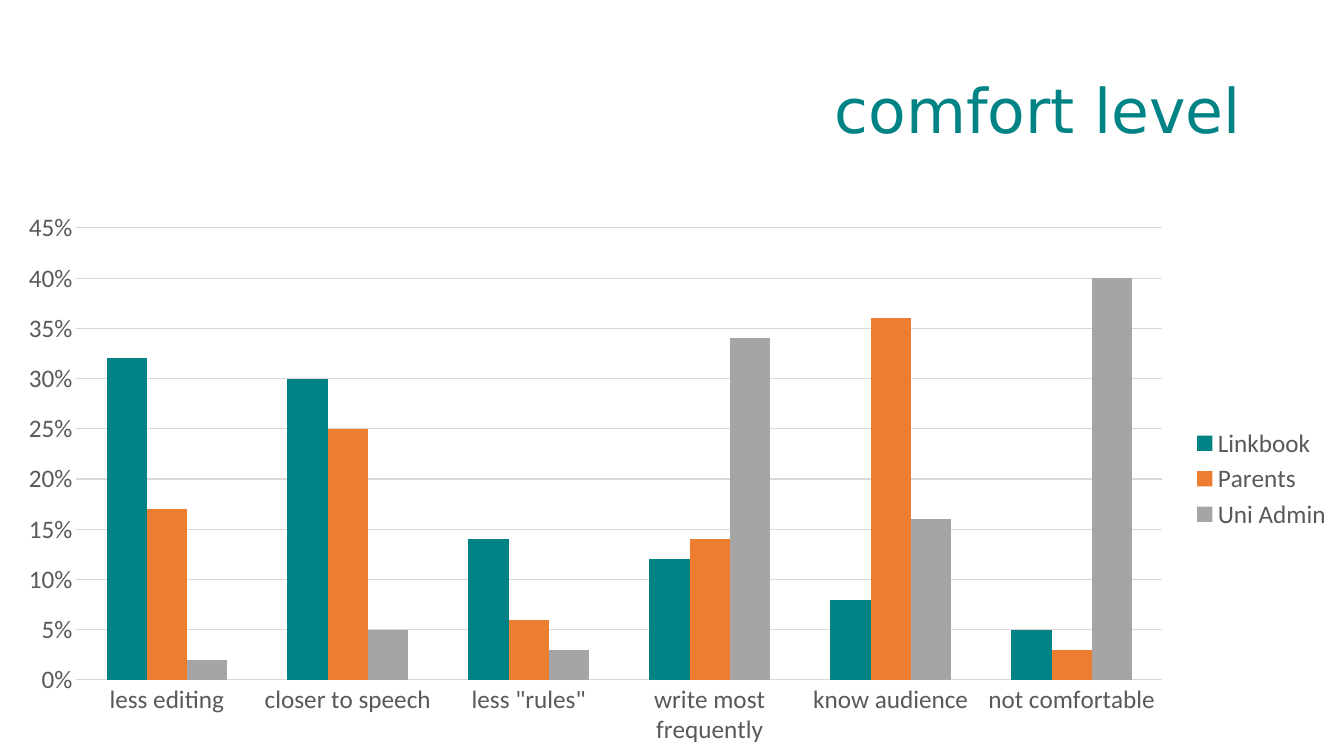
import pptx
import pptx.chart.data
import pptx.dml.color
import pptx.enum.chart
import pptx.enum.text
import pptx.util
from pptx.util import Cm

COLOURS = {
    "teal": "008385",
    "orange": "ED7D31",
    "silver": "A5A5A5",
    "label": "595959",
    "rule": "D9D9D9",
}
REASONS = ["less editing", "closer to speech", 'less "rules"',
           "write most frequently", "know audience", "not comfortable"]
AUDIENCES = [
    ("Linkbook", "teal", [0.32, 0.3, 0.14, 0.12, 0.08, 0.05]),
    ("Parents", "orange", [0.17, 0.25, 0.06, 0.14, 0.36, 0.03]),
    ("Uni Admin", "silver", [0.02, 0.05, 0.03, 0.34, 0.16, 0.4]),
]


def colour(name):
    return pptx.dml.color.RGBColor.from_string(COLOURS[name])


def style_font(font, size, name, colour_name):
    font.size = pptx.util.Pt(size)
    font.name = name
    font.color.rgb = colour(colour_name)


def style_line(line, colour_name, width):
    line.color.rgb = colour(colour_name)
    line.width = pptx.util.Pt(width)


def add_text(page, words, left, top, width, height, *, size, font, colour_name,
             align, anchor, line_spacing=1.0):
    box = page.shapes.add_textbox(Cm(left), Cm(top), Cm(width), Cm(height))
    frame = box.text_frame
    frame.word_wrap = True
    frame.vertical_anchor = anchor
    para = frame.paragraphs[0]
    para.alignment = align
    para.line_spacing = line_spacing
    span = para.add_run()
    span.text = words
    style_font(span.font, size, font, colour_name)


def style_axes(chart):
    reasons, shares = chart.category_axis, chart.value_axis
    for axis in (reasons, shares):
        axis.major_tick_mark = pptx.enum.chart.XL_TICK_MARK.NONE
        axis.minor_tick_mark = pptx.enum.chart.XL_TICK_MARK.NONE
        style_font(axis.tick_labels.font, 18, "Calibri", "label")
    reasons.has_major_gridlines = False
    style_line(reasons.format.line, "rule", 0.75)
    shares.minimum_scale = 0
    shares.maximum_scale = 0.45
    shares.major_unit = 0.05
    shares.tick_labels.number_format = "0%"
    shares.tick_labels.number_format_is_linked = False
    shares.format.line.fill.background()
    style_line(shares.major_gridlines.format.line, "rule", 0.75)


def add_column_chart(page, left, top, width, height):
    data = pptx.chart.data.CategoryChartData(number_format="0%")
    data.categories = REASONS
    for name, _, values in AUDIENCES:
        data.add_series(name, values)
    chart = page.shapes.add_chart(
        pptx.enum.chart.XL_CHART_TYPE.COLUMN_CLUSTERED,
        Cm(left), Cm(top), Cm(width), Cm(height), data).chart
    chart.has_title = False
    style_font(chart.font, 18, "Calibri", "label")

    plot = chart.plots[0]
    plot.gap_width = 150
    plot.overlap = 0
    plot.vary_by_categories = False
    for series, (_, fill, _) in zip(plot.series, AUDIENCES):
        series.format.fill.solid()
        series.format.fill.fore_color.rgb = colour(fill)
        series.invert_if_negative = False

    style_axes(chart)
    chart.has_legend = True
    chart.legend.position = pptx.enum.chart.XL_LEGEND_POSITION.RIGHT
    chart.legend.include_in_layout = False
    style_font(chart.legend.font, 18, "Calibri", "label")


def main():
    deck = pptx.Presentation()
    deck.slide_width, deck.slide_height = Cm(33.87), Cm(19.05)
    page = deck.slides.add_slide(deck.slide_layouts[6])
    add_text(page, "comfort level", 2.33, 1.01, 29.21, 3.68,
             size=44, font="DejaVu Sans", colour_name="teal",
             align=pptx.enum.text.PP_ALIGN.RIGHT,
             anchor=pptx.enum.text.MSO_ANCHOR.MIDDLE, line_spacing=0.9)
    add_column_chart(page, 0.05, 5.08, 33.78, 13.97)
    deck.save("out.pptx")


if __name__ == "__main__":
    main()
